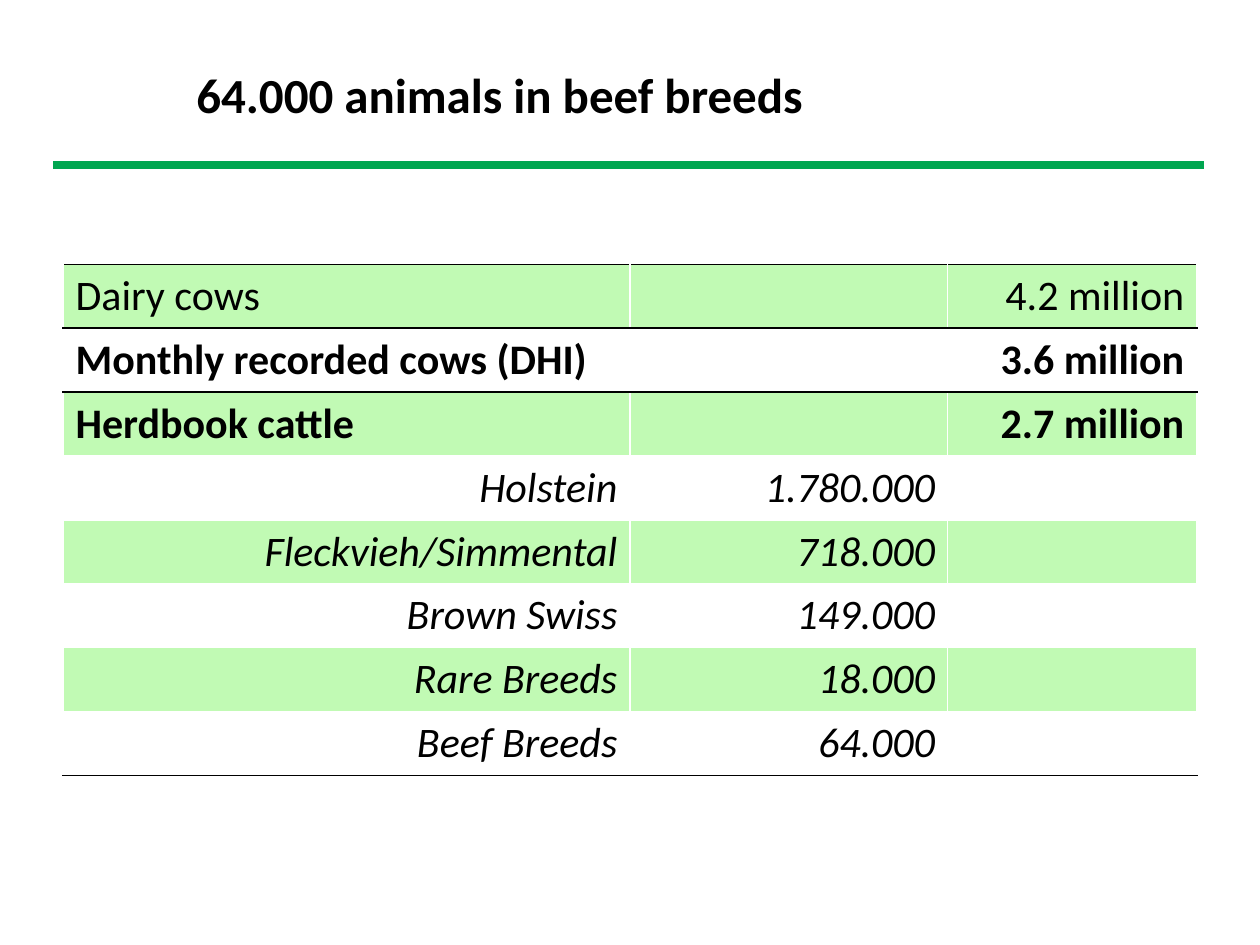
import lxml.etree
import pptx
import pptx.dml.color
import pptx.enum.text
import pptx.oxml.ns
import pptx.util

Pt = pptx.util.Pt
ALIGN = pptx.enum.text.PP_ALIGN
ANCHOR = pptx.enum.text.MSO_ANCHOR
AUTO_SIZE = pptx.enum.text.MSO_AUTO_SIZE
qn = pptx.oxml.ns.qn

BLACK, WHITE, LIGHT_GREEN, GREEN = "000000", "FFFFFF", "C1FAB4", "00A650"
TITLE_FONT = {"name": "Calibri", "size": Pt(28), "bold": True}
PLAIN = {"name": "Calibri", "size": Pt(24), "bold": False, "italic": False}
STRONG = {**PLAIN, "bold": True}
BREED = {**PLAIN, "italic": True}

CATTLE = [
    (("Dairy cows", "", "4.2 million"), PLAIN),
    (("Monthly recorded cows (DHI)", "", "3.6 million"), STRONG),
    (("Herdbook cattle", "", "2.7 million"), STRONG),
    (("Holstein", "1.780.000", ""), BREED),
    (("Fleckvieh/Simmental", "718.000", ""), BREED),
    (("Brown Swiss", "149.000", ""), BREED),
    (("Rare Breeds", "18.000", ""), BREED),
    (("Beef Breeds", "64.000", ""), BREED),
]
COLUMN_WIDTHS = (324, 181.5, 142.5)
RULED_EDGES = {0, 1, 2, len(CATTLE)}


def rgb(value):
    return pptx.dml.color.RGBColor.from_string(value)


def apply(target, values):
    for attribute, value in values.items():
        setattr(target, attribute, value)


def format_paragraph(paragraph, font_values, alignment):
    paragraph.alignment = alignment
    apply(paragraph.font, font_values)
    paragraph.font.color.rgb = rgb(BLACK)


def add_title(slide, wording):
    title = slide.shapes.title
    apply(title, {"left": Pt(105), "top": Pt(31.5), "width": Pt(516), "height": Pt(44)})
    title.text_frame.text = wording
    apply(title.text_frame, {"vertical_anchor": ANCHOR.MIDDLE, "auto_size": AUTO_SIZE.NONE})
    format_paragraph(title.text_frame.paragraphs[0], TITLE_FONT, ALIGN.LEFT)


def add_rule(slide, left, right, height):
    rule = slide.shapes.add_connector(
        pptx.enum.shapes.MSO_CONNECTOR.STRAIGHT, Pt(left), Pt(height), Pt(right), Pt(height))
    rule.line.color.rgb = rgb(GREEN)
    rule.line.width = Pt(4.5)
    lxml.etree.SubElement(rule._element.spPr, qn("a:effectLst"))


def set_border(cell, side, colour):
    border = lxml.etree.SubElement(
        cell._tc.get_or_add_tcPr(), qn(f"a:ln{side}"), w=str(Pt(1)))
    fill = lxml.etree.SubElement(border, qn("a:solidFill"))
    lxml.etree.SubElement(fill, qn("a:srgbClr"), val=colour)


def edge_colour(edge):
    return BLACK if edge in RULED_EDGES else WHITE


def fill_cell(cell, wording, font_values, alignment, row):
    borders = {"L": WHITE, "R": WHITE, "T": edge_colour(row), "B": edge_colour(row + 1)}
    for side, colour in borders.items():
        set_border(cell, side, colour)
    cell.fill.solid()
    cell.fill.fore_color.rgb = rgb(WHITE if row % 2 else LIGHT_GREEN)
    cell.text = wording
    format_paragraph(cell.text_frame.paragraphs[0], font_values, alignment)


def add_cattle_table(slide):
    table = slide.shapes.add_table(
        len(CATTLE), len(COLUMN_WIDTHS), Pt(36), Pt(151), Pt(648), Pt(288)).table
    apply(table, {"first_row": False, "horz_banding": False})
    for column, width in zip(table.columns, COLUMN_WIDTHS):
        column.width = Pt(width)
    for row, (wordings, font_values) in enumerate(CATTLE):
        for column, wording in enumerate(wordings):
            is_group = column == 0 and font_values is not BREED
            alignment = ALIGN.LEFT if is_group else ALIGN.RIGHT
            fill_cell(table.cell(row, column), wording, font_values, alignment, row)


def main():
    presentation = pptx.Presentation()
    apply(presentation, {"slide_width": Pt(720), "slide_height": Pt(540)})
    slide = presentation.slides.add_slide(presentation.slide_layouts[5])
    add_rule(slide, 30.5, 688, 94.5)
    add_title(slide, "64.000 animals in beef breeds")
    add_cattle_table(slide)
    presentation.save("out.pptx")


if __name__ == "__main__":
    main()
